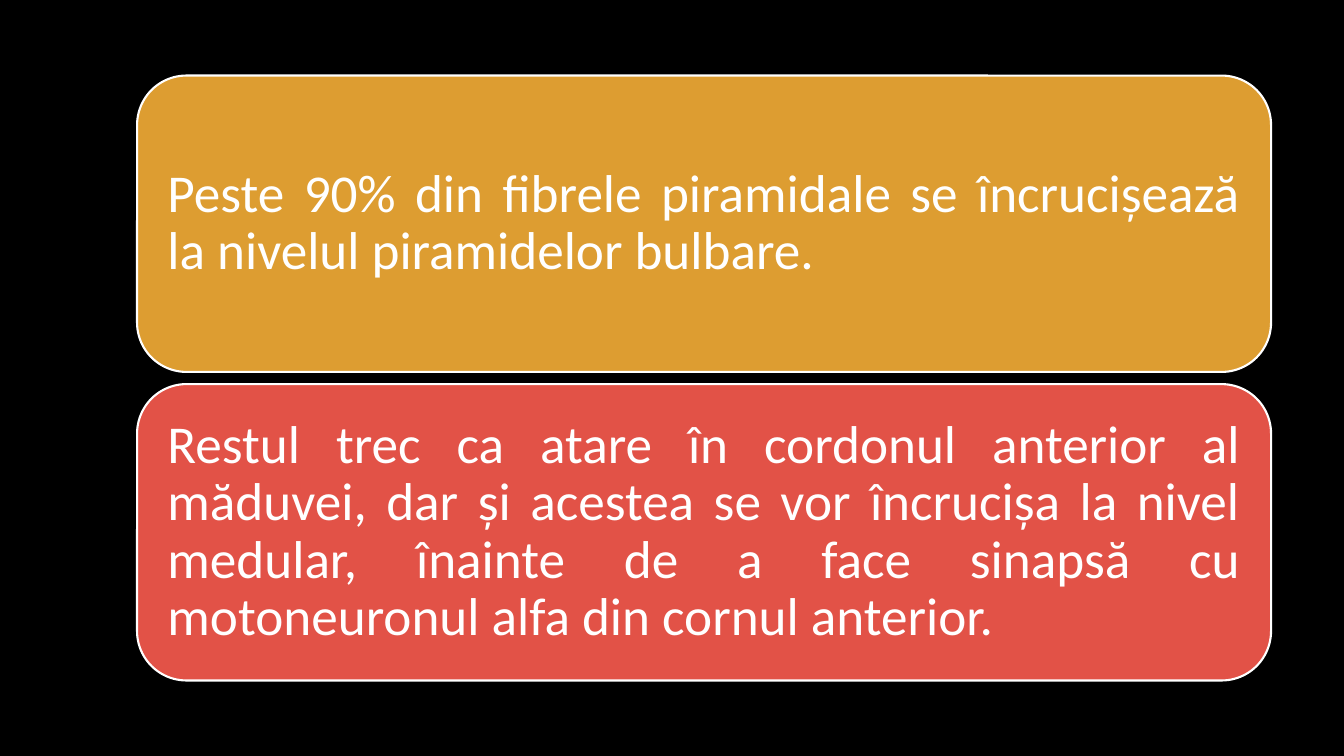
from pptx import Presentation
from pptx.dml.color import RGBColor
from pptx.enum.shapes import MSO_SHAPE
from pptx.enum.text import MSO_ANCHOR, PP_ALIGN
from pptx.util import Pt

WHITE = "FFFFFF"
PANEL_LEFT, PANEL_TOP = 97.9, 54
PANEL_WIDTH, PANEL_HEIGHT = 810, 211.7
PANEL_GAP = 8.7
PADDING = 11.4

STATEMENTS = [
    ("DD9D31", "Peste 90% din fibrele piramidale se încrucișează la nivelul "
               "piramidelor bulbare."),
    ("E25247", "Restul trec ca atare în cordonul anterior al măduvei, dar și "
               "acestea se vor încrucișa la nivel medular, înainte de a face "
               "sinapsă cu motoneuronul alfa din cornul anterior."),
]


def paint(fill, color):
    fill.solid()
    fill.fore_color.rgb = RGBColor.from_string(color)


def add_panel(slide, top, color, statement):
    panel = slide.shapes.add_shape(
        MSO_SHAPE.ROUNDED_RECTANGLE,
        Pt(PANEL_LEFT), Pt(top), Pt(PANEL_WIDTH), Pt(PANEL_HEIGHT))
    panel.shadow.inherit = False
    paint(panel.fill, color)
    paint(panel.line.fill, WHITE)
    panel.line.width = Pt(1.5)

    frame = panel.text_frame
    frame.word_wrap = True
    frame.vertical_anchor = MSO_ANCHOR.MIDDLE
    frame.margin_left = frame.margin_right = Pt(PADDING)
    frame.margin_top = frame.margin_bottom = Pt(PADDING)

    paragraph = frame.paragraphs[0]
    paragraph.alignment = PP_ALIGN.JUSTIFY
    paragraph.line_spacing = 0.9
    run = paragraph.add_run()
    run.text = statement
    run.font.name = "Calibri"
    run.font.size = Pt(38)
    paint(run.font.fill, WHITE)


def main():
    presentation = Presentation()
    presentation.slide_width, presentation.slide_height = Pt(960), Pt(540)
    slide = presentation.slides.add_slide(presentation.slide_layouts[6])
    paint(slide.background.fill, "000000")
    for row, (color, statement) in enumerate(STATEMENTS):
        top = PANEL_TOP + row * (PANEL_HEIGHT + PANEL_GAP)
        add_panel(slide, top, color, statement)
    presentation.save("out.pptx")


if __name__ == "__main__":
    main()
